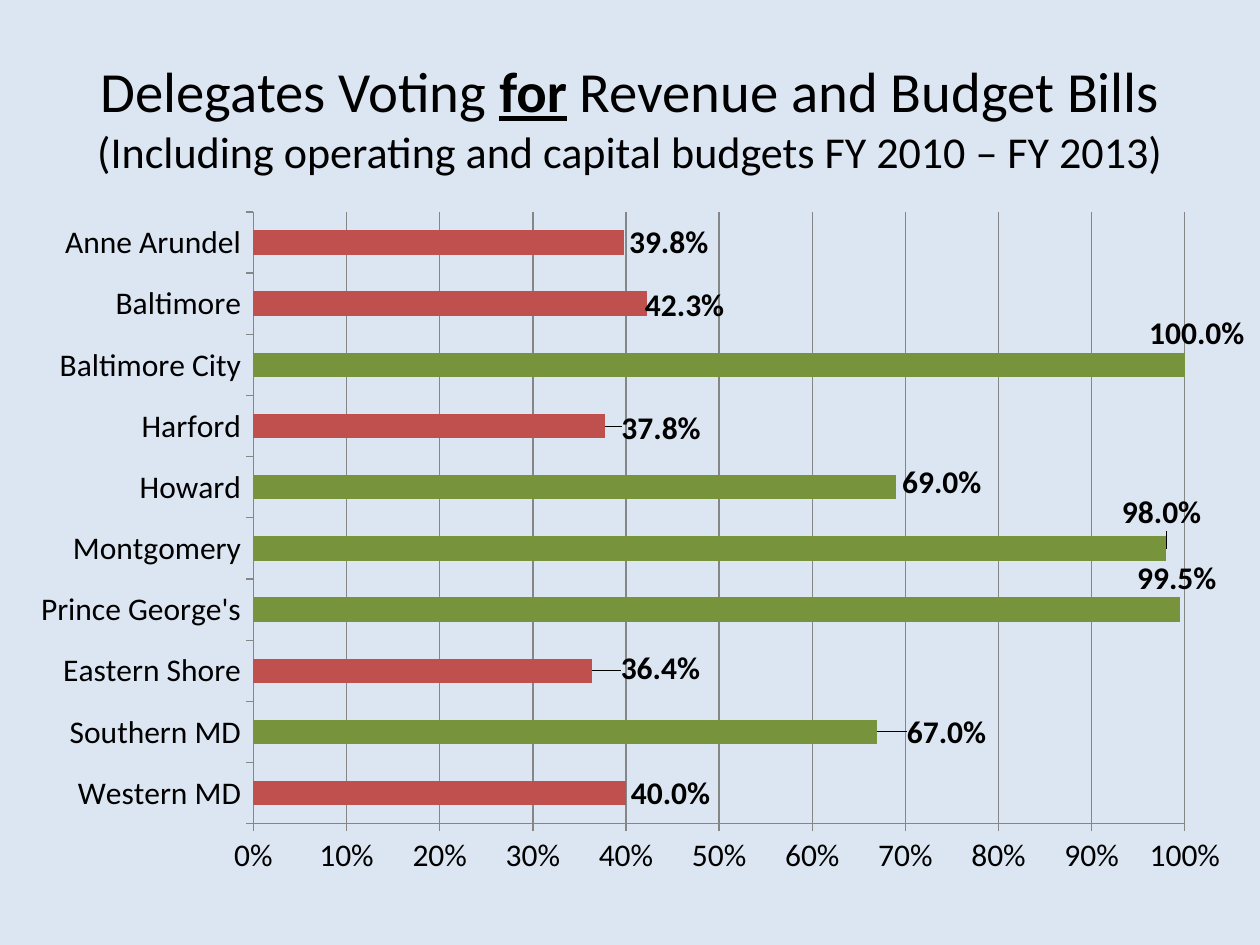
from lxml import etree
from pptx import Presentation
from pptx import util as u
from pptx.chart.data import CategoryChartData
from pptx.dml.color import RGBColor
from pptx.enum import chart as ch, text
from pptx.oxml.ns import qn

COLORS = {"background": "DCE6F2", "text": "000000", "line": "868686",
          "for": "77933C", "against": "C0504D"}
FONT = "Calibri"
MAJORITY = 0.5

# text, size in points, emphasised
TITLE_LINES = [
    [("Delegates Voting ", 32.4, False), ("for", 32.4, True),
     (" Revenue and Budget Bills", 32.4, False)],
    [("(Including operating and capital budgets FY 2010 – FY 2013)", 25.2, False)],
]

# region, share, label shift as fractions of the chart's width and height
VOTES = [
    ("Western MD", 0.4, None),
    ("Southern MD", 0.67, (0.02, 0)),
    ("Eastern Shore", 0.364, (0.019, -0.003)),
    ("Prince George's", 0.995, (-0.039, -0.046)),
    ("Montgomery", 0.98, (-0.04, -0.052)),
    ("Howard", 0.69, (0.001, -0.007)),
    ("Harford", 0.378, (0.009, 0.003)),
    ("Baltimore City", 1, (-0.033, -0.046)),
    ("Baltimore", 0.423, (-0.006, 0.003)),
    ("Anne Arundel", 0.398, None),
]
PLOT = {"x": 0.193, "y": 0.019, "w": 0.758, "h": 0.888}


def rgb(name):
    return RGBColor.from_string(COLORS[name])


def style_font(font, size, bold=False):
    font.name, font.size, font.bold = FONT, u.Pt(size), bold
    font.color.rgb = rgb("text")


def make_layout(values, modes=()):
    layout = etree.Element(qn("c:layout"))
    manual = etree.SubElement(layout, qn("c:manualLayout"))
    for tag, value in [*modes, *values.items()]:
        etree.SubElement(manual, qn(f"c:{tag}")).set("val", str(value))
    return layout


def add_title(slide):
    box = slide.shapes.add_textbox(u.Cm(1.27), u.Cm(0.76), u.Cm(22.86), u.Cm(3.18))
    tf = box.text_frame
    tf.word_wrap = True
    tf.vertical_anchor = text.MSO_ANCHOR.MIDDLE
    p = tf.paragraphs[0]
    p.alignment = text.PP_ALIGN.CENTER
    for i, line in enumerate(TITLE_LINES):
        if i:
            p.add_line_break()
        for words, size, strong in line:
            r = p.add_run()
            r.text = words
            style_font(r.font, size, strong)
            r.font.underline = strong


def shift_label(series, index, shift):
    label = series.points[index].data_label
    style_font(label.font, 18, True)
    label.position = ch.XL_LABEL_POSITION.OUTSIDE_END
    idx = series.data_labels._element.xpath(f"c:dLbl/c:idx[@val='{index}']")[0]
    layout = make_layout(dict(zip("xy", shift)))
    idx.addnext(layout)
    number = etree.Element(qn("c:numFmt"), formatCode="0.0%", sourceLinked="0")
    layout.addnext(number)


def add_votes_chart(slide):
    data = CategoryChartData(number_format="0.0%")
    data.categories = [region for region, _, _ in VOTES]
    data.add_series("Series 1", [share for _, share, _ in VOTES])
    chart = slide.shapes.add_chart(
        ch.XL_CHART_TYPE.BAR_CLUSTERED,
        u.Cm(0.33), u.Cm(4.01), u.Cm(24.77), u.Cm(13.89), data).chart
    chart.has_legend = chart.has_title = False
    style_font(chart.font, 18)

    area = chart._chartSpace.chart.plotArea
    for old in area.findall(qn("c:layout")):
        area.remove(old)
    area.insert(0, make_layout(PLOT, [("layoutTarget", "inner"),
                                      ("xMode", "edge"), ("yMode", "edge")]))

    for axis in (chart.category_axis, chart.value_axis):
        axis.major_tick_mark = ch.XL_TICK_MARK.OUTSIDE
        axis.format.line.color.rgb = rgb("line")
        axis.format.line.width = u.Pt(0.75)
    axis = chart.value_axis
    axis.minimum_scale, axis.maximum_scale, axis.major_unit = 0, 1, 0.1
    axis.tick_labels.number_format = "0%"
    axis.tick_labels.number_format_is_linked = False
    axis.has_major_gridlines = True
    axis.major_gridlines.format.line.color.rgb = rgb("line")
    axis.major_gridlines.format.line.width = u.Pt(0.75)

    plot = chart.plots[0]
    plot.gap_width = 150
    plot.vary_by_categories = False
    series = plot.series[0]
    labels = series.data_labels
    labels.show_value = True
    labels.number_format = "0.0%"
    labels.number_format_is_linked = False
    labels.position = ch.XL_LABEL_POSITION.OUTSIDE_END
    style_font(labels.font, 18, True)
    for i, (_, share, shift) in enumerate(VOTES):
        fill = series.points[i].format.fill
        fill.solid()
        fill.fore_color.rgb = rgb("for" if share > MAJORITY else "against")
        if shift:
            shift_label(series, i, shift)


def main():
    prs = Presentation()
    prs.slide_width, prs.slide_height = u.Cm(25.4), u.Cm(19.05)
    slide = prs.slides.add_slide(prs.slide_layouts[6])
    slide.background.fill.solid()
    slide.background.fill.fore_color.rgb = rgb("background")
    add_title(slide)
    add_votes_chart(slide)
    prs.save("out.pptx")


if __name__ == "__main__":
    main()
